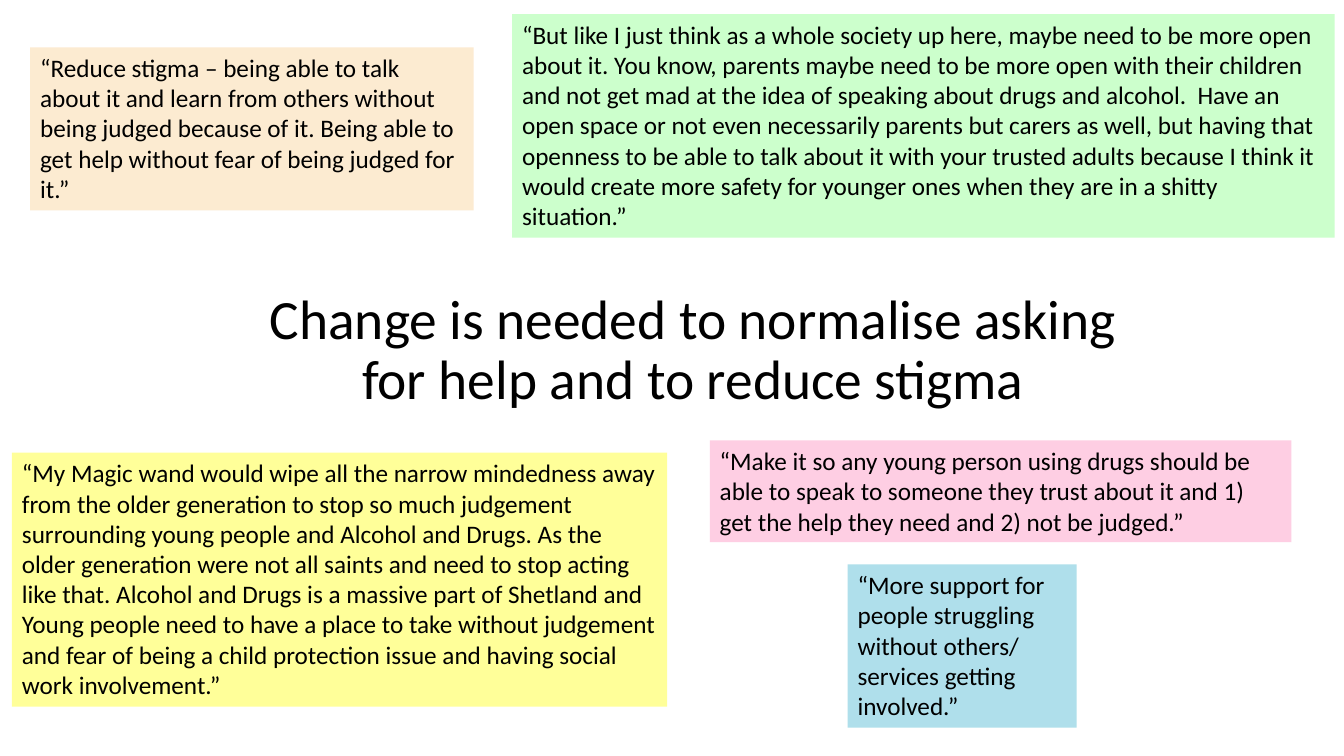
"""Build a slide of coloured quotes around a central message on stigma."""
import pptx
import pptx.dml.color
import pptx.enum.text
import pptx.util

Pt = pptx.util.Pt
Color = pptx.dml.color.RGBColor

FONT = "Calibri"
BLACK = Color(0x00, 0x00, 0x00)
BLUE = Color(0xAF, 0xDF, 0xEB)
YELLOW = Color(0xFF, 0xFF, 0x99)
GREEN = Color(0xCC, 0xFF, 0xCC)
PINK = Color(0xFE, 0xCE, 0xE3)
CREAM = Color(0xFC, 0xEB, 0xD1)

TITLE = "Change is needed to normalise asking for help and to reduce stigma"
QUOTES = [
    (605.5, 403.2, 163.5, 116.6, BLUE,
     "“More support for people struggling without others/ services getting "
     "involved.”"),
    (8.6, 323.3, 468, 181.4, YELLOW,
     "“My Magic wand would wipe all the narrow mindedness away from the older "
     "generation to stop so much judgement surrounding young people and "
     "Alcohol and Drugs. As the older generation were not all saints and need "
     "to stop acting like that. Alcohol and Drugs is a massive part of "
     "Shetland and Young people need to have a place to take without "
     "judgement and fear of being a child protection issue and having social "
     "work involvement.”"),
    (365.8, 10, 587.5, 159.8, GREEN,
     "“But like I just think as a whole society up here, maybe need to be more "
     "open about it. You know, parents maybe need to be more open with their "
     "children and not get mad at the idea of speaking about drugs and "
     "alcohol.  Have an open space or not even necessarily parents but carers "
     "as well, but having that openness to be able to talk about it with your "
     "trusted adults because I think it would create more safety for younger "
     "ones when they are in a shitty situation.”"),
    (507, 314.6, 415.4, 72.7, PINK,
     "“Make it so any young person using drugs should be able to speak to "
     "someone they trust about it and 1) get the help they need and 2) not be "
     "judged.”"),
    (21.6, 33.8, 316.8, 116.6, CREAM,
     "“Reduce stigma – being able to talk about it and learn from others "
     "without being judged because of it. Being able to get help without fear "
     "of being judged for it.”"),
]


def write(frame, text, size, align):
    """Put one paragraph of black text in a frame and return it."""
    frame.word_wrap = True
    para = frame.paragraphs[0]
    para.text = text
    para.alignment = align
    para.font.name = FONT
    para.font.size = Pt(size)
    para.font.color.rgb = BLACK
    return para


def set_title(slide):
    """Place and format the title."""
    title = slide.shapes.title
    title.left, title.top = Pt(161.3), Pt(203.8)
    title.width, title.height = Pt(667.5), Pt(94.3)
    frame = title.text_frame
    para = write(frame, TITLE, 39.6, pptx.enum.text.PP_ALIGN.CENTER)
    para.line_spacing = 0.9
    frame.auto_size = pptx.enum.text.MSO_AUTO_SIZE.NONE
    frame.vertical_anchor = pptx.enum.text.MSO_ANCHOR.MIDDLE


def add_quote(slide, left, top, width, height, color, text):
    """Add a filled box holding one quote."""
    box = slide.shapes.add_textbox(Pt(left), Pt(top), Pt(width), Pt(height))
    box.fill.solid()
    box.fill.fore_color.rgb = color
    write(box.text_frame, text, 18, pptx.enum.text.PP_ALIGN.LEFT)
    box.text_frame.auto_size = pptx.enum.text.MSO_AUTO_SIZE.SHAPE_TO_FIT_TEXT


def main():
    """Build and save the slide."""
    deck = pptx.Presentation()
    deck.slide_width, deck.slide_height = Pt(960), Pt(540)
    slide = deck.slides.add_slide(deck.slide_layouts[5])
    set_title(slide)
    for quote in QUOTES:
        add_quote(slide, *quote)
    deck.save("out.pptx")


if __name__ == "__main__":
    main()
